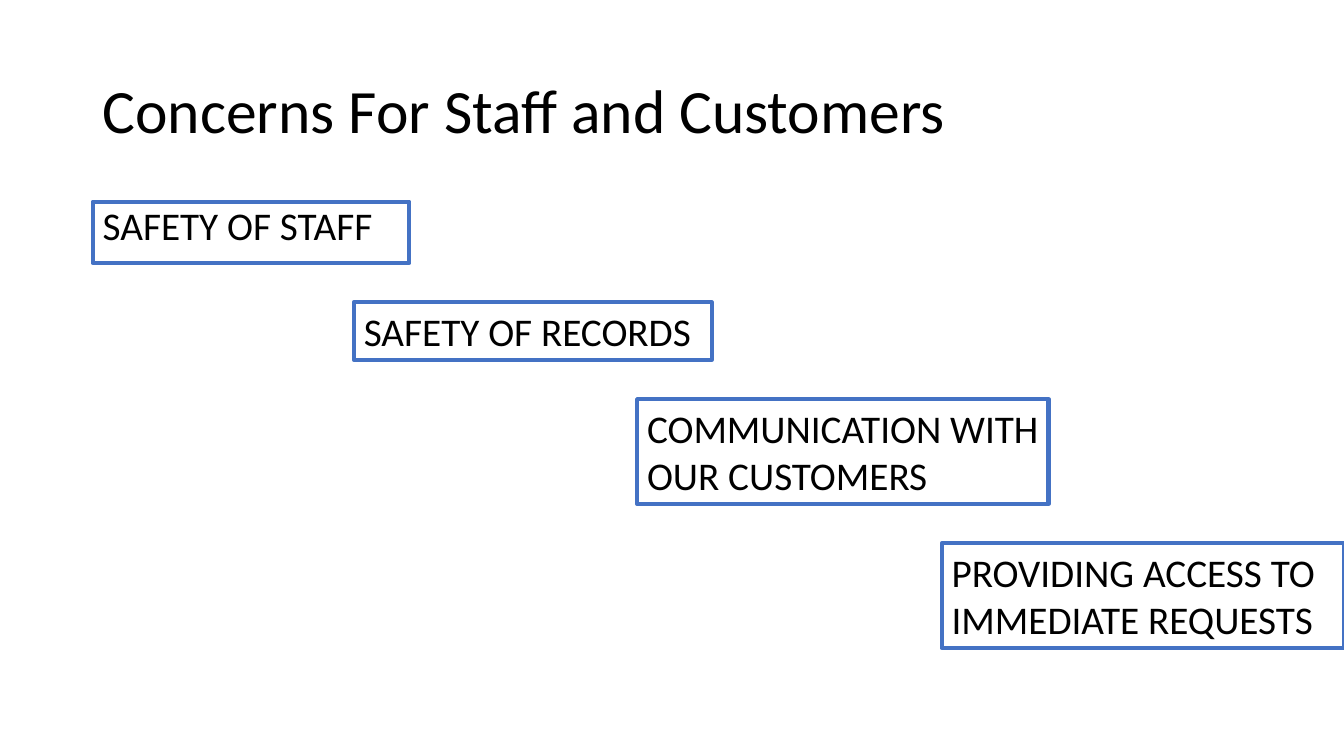
from pptx import Presentation
from pptx.dml.color import RGBColor
from pptx.enum.shapes import MSO_SHAPE
from pptx.enum.text import MSO_ANCHOR, MSO_AUTO_SIZE, PP_ALIGN
from pptx.util import Inches, Pt

RECTANGLE = MSO_SHAPE.RECTANGLE
TOP, MIDDLE = MSO_ANCHOR.TOP, MSO_ANCHOR.MIDDLE
GROW, FIXED = MSO_AUTO_SIZE.SHAPE_TO_FIT_TEXT, MSO_AUTO_SIZE.NONE
LEFT = PP_ALIGN.LEFT

COLORS = {"paper": "FFFFFF", "ink": "000000", "border": "4472C4"}
FONT = "Calibri"
SLIDE_W, SLIDE_H = Inches(13.33), Inches(7.5)

# Regions and sizes below are percentages of the slide's width and height
TITLE_BOX = (6.9, 5.33, 86.27, 19.33)
STAIRCASE_BOX = (6.9, 26.67, 93.1, 59.2)
STEP_GAP = 5.2

# Wording, offset from the staircase's left, width, height, line spacing, sizing
CONCERNS = [
    ("SAFETY OF STAFF", 0, 23.56, 8.13, 0.9, FIXED),
    ("SAFETY OF RECORDS", 19.43, 26.63, 7.6, 1.0, GROW),
    ("COMMUNICATION WITH OUR CUSTOMERS", 40.51, 30.61, 13.87, 1.0, GROW),
    ("PROVIDING ACCESS TO IMMEDIATE REQUESTS", 63.17, 29.93, 13.87, 1.0, GROW),
]


def color(name):
    return RGBColor.from_string(COLORS[name])


def place(left, top, width, height):
    return (int(SLIDE_W * left / 100), int(SLIDE_H * top / 100),
            int(SLIDE_W * width / 100), int(SLIDE_H * height / 100))


def write(frame, wording, size, anchor, spacing, sizing):
    frame.word_wrap = True
    frame.auto_size = sizing
    frame.vertical_anchor = anchor
    paragraph = frame.paragraphs[0]
    paragraph.alignment = LEFT
    paragraph.line_spacing = spacing
    run = paragraph.add_run()
    run.text = wording
    run.font.name = FONT
    run.font.size = Pt(size)
    run.font.color.rgb = color("ink")


def add_title(slide, box):
    title = slide.shapes.add_textbox(*place(*box))
    write(title.text_frame, "Concerns For Staff and Customers", 44, MIDDLE, 0.9, FIXED)


def add_staircase(slide, box):
    left, top, _, _ = box
    for wording, offset, width, height, spacing, sizing in CONCERNS:
        step = slide.shapes.add_shape(RECTANGLE, *place(left + offset, top, width, height))
        step.shadow.inherit = False
        step.fill.solid()
        step.fill.fore_color.rgb = color("paper")
        step.line.color.rgb = color("border")
        step.line.width = Pt(3)
        write(step.text_frame, wording, 28, TOP, spacing, sizing)
        top += height + STEP_GAP


def main():
    deck = Presentation()
    deck.slide_width, deck.slide_height = SLIDE_W, SLIDE_H
    slide = deck.slides.add_slide(deck.slide_layouts[6])
    add_title(slide, TITLE_BOX)
    add_staircase(slide, STAIRCASE_BOX)
    deck.save("out.pptx")


if __name__ == "__main__":
    main()
